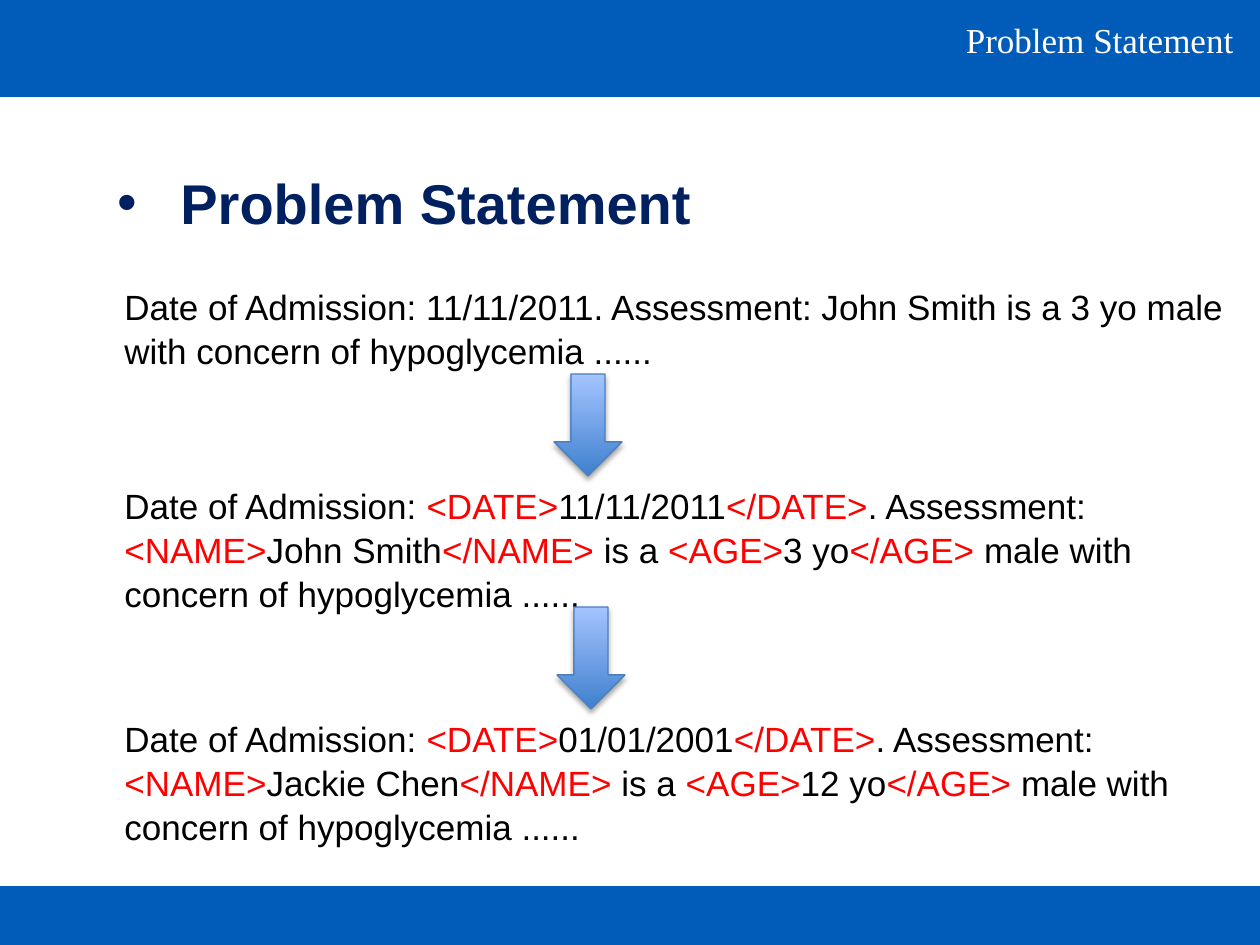
from pptx import Presentation
from pptx.dml.color import RGBColor as RGB
from pptx.enum.shapes import MSO_SHAPE as SHAPE
from pptx.enum.text import MSO_ANCHOR as ANCHOR, PP_ALIGN as ALIGN
from pptx.oxml.ns import qn
from pptx.util import Pt
from lxml.etree import SubElement as Sub

HUES = {"bar": "005CB8", "title": "002060", "text": "000000", "tag": "FF0000",
        "white": "FFFFFF", "low": "3F80CE", "high": "A4C4FF", "edge": "4B7EBC"}
HUES = {name: RGB.from_string(code) for name, code in HUES.items()}


def place(*lengths):
    """Turn px, at 126 to the inch, into EMU."""
    return [px * 914400 // 126 for px in lengths]


def style(run, size, hue, face="Arial", bold=False):
    font = run.font
    font.size, font.name, font.bold = Pt(size), face, bold
    font.color.rgb = HUES[hue]


deck = Presentation()
deck.slide_width, deck.slide_height = place(1260, 945)
slide = deck.slides.add_slide(deck.slide_layouts[6])
shapes = slide.shapes

# Bars at top and bottom
for top, height in ((0, 97), (886, 59)):
    bar = shapes.add_shape(SHAPE.RECTANGLE, *place(0, top, 1260, height))
    bar.shadow.inherit = False
    bar.fill.solid()
    bar.fill.fore_color.rgb = HUES["bar"]
    bar.line.fill.background()

# Title with its bullet
frame = shapes.add_textbox(*place(105, 154, 1067, 97)).text_frame
frame.word_wrap = True
frame.vertical_anchor = ANCHOR.MIDDLE
para = frame.paragraphs[0]
para.text = "Problem Statement"
props = para._p.get_or_add_pPr()
indent = place(63)[0]
props.set("marL", str(indent))
props.set("indent", str(-indent))
Sub(props, qn("a:buFont"), typeface="Arial")
Sub(props, qn("a:buChar"), char="•")
style(para.runs[0], 32, "title", bold=True)

# Running head
frame = shapes.add_textbox(*place(924, 20, 322, 47)).text_frame
frame.word_wrap = True
para = frame.paragraphs[0]
para.text = "Problem Statement"
para.alignment = ALIGN.RIGHT
para.line_spacing = 0.8
style(para.runs[0], 20, "white", "Times New Roman")

# Three stages of the note; "|" parts plain text from tags
tail = "male with concern of hypoglycemia ......"
tagged = ("Date of Admission: |<DATE>|{}|</DATE>|. Assessment: "
          "|<NAME>|{}|</NAME>| is a |<AGE>|{}|</AGE> |" + tail)
notes = (
    (278, "Date of Admission: 11/11/2011. Assessment: John Smith is a 3 yo " + tail),
    (477, tagged.format("11/11/2011", "John Smith", "3 yo")),
    (710, tagged.format("01/01/2001", "Jackie Chen", "12 yo")),
)
for top, note in notes:
    frame = shapes.add_textbox(*place(49, top, 1211, 53)).text_frame
    frame.word_wrap = True
    para = frame.paragraphs[0]
    para._p.get_or_add_pPr().set("marL", str(indent))
    para.line_spacing = 1.04
    for part in note.split("|"):
        run = para.add_run()
        run.text = part
        style(run, 20, "tag" if part.startswith("<") else "text")

# Arrows between the stages
for left, top in ((554, 374), (557, 607)):
    arrow = shapes.add_shape(SHAPE.DOWN_ARROW, *place(left, top, 68, 102))
    arrow.fill.gradient()
    arrow.fill.gradient_angle = 90
    for stop, hue in zip(arrow.fill.gradient_stops, ("low", "high")):
        stop.color.rgb = HUES[hue]
    arrow.line.color.rgb = HUES["edge"]
    arrow.line.width = Pt(0.75)
    arrow.shadow.inherit = False
    effects = arrow._element.spPr.find(qn("a:effectLst"))
    shade = Sub(effects, qn("a:outerShdw"), blurRad=str(Pt(3.1)),
                dist=str(Pt(1.8)), dir="5400000", rotWithShape="0")
    black = Sub(shade, qn("a:srgbClr"), val="000000")
    Sub(black, qn("a:alpha"), val="35000")

deck.save("out.pptx")
